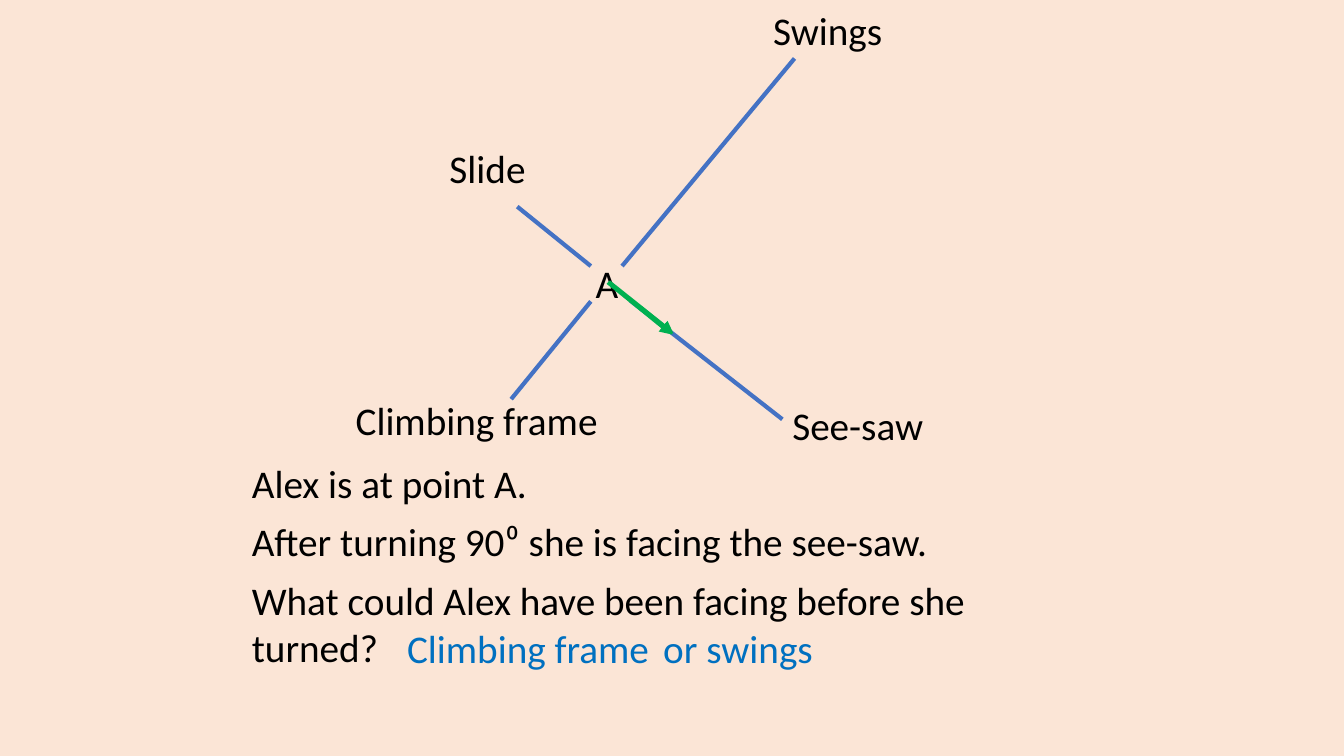
from lxml.etree import SubElement
from pptx import Presentation
from pptx.dml.color import RGBColor
from pptx.enum.shapes import MSO_CONNECTOR
from pptx.enum.text import MSO_AUTO_SIZE
from pptx.oxml.ns import qn
from pptx.util import Inches, Pt

PEACH, BLACK = "FBE5D6", "000000"
PATH_BLUE, ANSWER_BLUE, FACING_GREEN = "4472C4", "0070C0", "00B050"
LINE_HEIGHT = 0.57

PLACES = [
    ("Swings", 4.14, 0.01, 1.49),
    ("See-saw", 4.33, 3.93, 1.54),
    ("Climbing frame", 0, 3.88, 2.9),
    ("Slide", 0.93, 1.38, 1.04),
    ("A", 2.38, 2.52, 0.53),
]
PATHS = [
    ((4.45, 0.58), (2.74, 2.64)),
    ((4.33, 4.16), (2.82, 2.98)),
    ((1.7, 2.05), (2.43, 2.64)),
    ((1.64, 3.96), (2.43, 2.99)),
]
FACING_ARROWS = [
    ((2.6, 2.8), (3.24, 3.32)),
    ((2.61, 2.8), (3.25, 3.31)),
]
QUESTION = [
    ("Alex is at point A.", 0, 0, 4.65, LINE_HEIGHT, BLACK),
    ("After turning 90⁰ she is facing the see-saw.", 0, 0.57, 7.06, LINE_HEIGHT, BLACK),
    ("What could Alex have been facing before she turned?", 0, 1.16, 7.57, 1.04, BLACK),
    ("Climbing frame", 1.54, 1.63, 2.9, LINE_HEIGHT, ANSWER_BLUE),
    ("or swings", 4.08, 1.63, 2.9, LINE_HEIGHT, ANSWER_BLUE),
]


def color(value):
    return RGBColor.from_string(value)


def add_text(page, text, left, top, width, height=LINE_HEIGHT, ink=BLACK):
    box = page.shapes.add_textbox(Inches(left), Inches(top), Inches(width), Inches(height))
    frame = box.text_frame
    frame.word_wrap = True
    frame.auto_size = MSO_AUTO_SIZE.SHAPE_TO_FIT_TEXT
    span = frame.paragraphs[0].add_run()
    span.text = text
    span.font.name = "Calibri"
    span.font.size = Pt(28)
    span.font.color.rgb = color(ink)


def add_line(page, left, top, start, end, ink, arrow=False):
    """Draw a line between two points measured from (left, top)."""
    line = page.shapes.add_connector(
        MSO_CONNECTOR.STRAIGHT,
        Inches(left + start[0]), Inches(top + start[1]),
        Inches(left + end[0]), Inches(top + end[1]),
    )
    line.line.color.rgb = color(ink)
    line.line.width = Pt(3)
    properties = line.element.spPr
    if arrow:
        SubElement(properties.find(qn("a:ln")), qn("a:tailEnd"), type="triangle")
    SubElement(properties, qn("a:effectLst"))


def add_playground(page, left, top):
    for name, across, down, width in PLACES:
        add_text(page, name, left + across, top + down, width)
    for start, end in PATHS:
        add_line(page, left, top, start, end, PATH_BLUE)
    for start, end in FACING_ARROWS:
        add_line(page, left, top, start, end, FACING_GREEN, arrow=True)


def add_question(page, left, top):
    for text, across, down, width, height, ink in QUESTION:
        add_text(page, text, left + across, top + down, width, height, ink)


def main():
    deck = Presentation()
    deck.slide_width, deck.slide_height = Inches(13.33), Inches(7.5)
    page = deck.slides.add_slide(deck.slide_layouts[6])
    page.background.fill.solid()
    page.background.fill.fore_color.rgb = color(PEACH)
    add_playground(page, 3.43, 0)
    add_question(page, 2.4, 4.51)
    deck.save("out.pptx")


if __name__ == "__main__":
    main()
